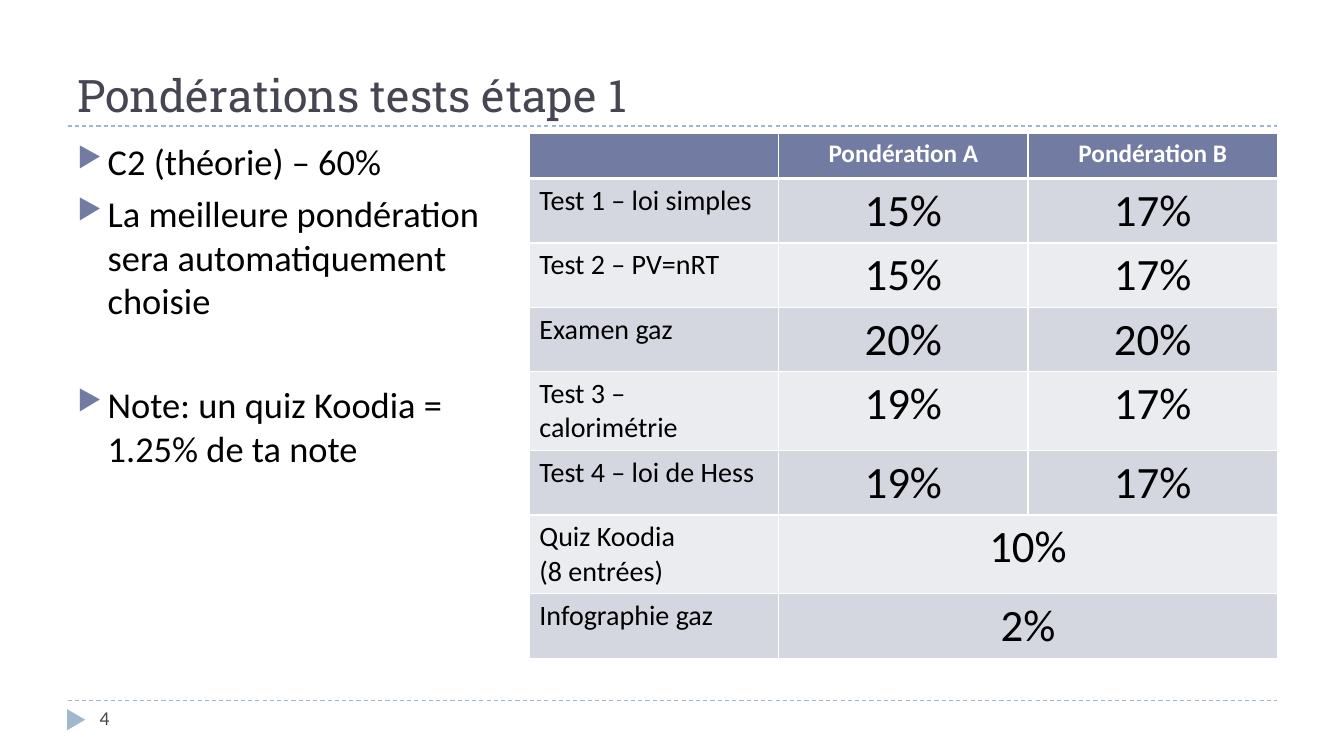
from dataclasses import dataclass

from lxml.etree import SubElement
from pptx import Presentation
from pptx.dml.color import RGBColor
from pptx.enum.dml import MSO_LINE
from pptx.enum.shapes import MSO_CONNECTOR, MSO_SHAPE
from pptx.enum.text import MSO_ANCHOR, PP_ALIGN
from pptx.oxml.ns import qn
from pptx.util import Inches, Pt


@dataclass(frozen=True)
class Theme:
    heading_font: str = "Roboto Slab"
    body_font: str = "Calibri"
    heading: str = "464653"
    text: str = "000000"
    white: str = "FFFFFF"
    accent: str = "727CA3"
    rule: str = "9FB8CD"
    bands: tuple = ("D5D7E0", "EBECF0")
    title_size: int = 32
    bullet_size: int = 26
    header_size: int = 18
    label_size: int = 20
    value_size: int = 32
    number_size: int = 14


THEME = Theme()

BULLETS = [
    # text, space before in points
    ("C2 (théorie) – 60%", 6),
    ("La meilleure pondération sera automatiquement choisie", 6),
    ("Note: un quiz Koodia = 1.25% de ta note", 43),
]

HEADERS = ["", "Pondération A", "Pondération B"]
WEIGHTS = [
    # label, row height, one value per column or a single shared value
    ("Test 1 – loi simples", 0.64, ["15%", "17%"]),
    ("Test 2 – PV=nRT", 0.64, ["15%", "17%"]),
    ("Examen gaz", 0.64, ["20%", "20%"]),
    ("Test 3 – calorimétrie", 0.78, ["19%", "17%"]),
    ("Test 4 – loi de Hess", 0.64, ["19%", "17%"]),
    ("Quiz Koodia\n(8 entrées)", 0.78, ["10%"]),
    ("Infographie gaz", 0.64, ["2%"]),
]


def write(paragraph, text, *, size, color=THEME.text, font=THEME.body_font,
          bold=False, align=PP_ALIGN.LEFT, space_before=0):
    paragraph.alignment = align
    paragraph.space_before = Pt(space_before)
    run = paragraph.add_run()
    run.text = text
    run.font.name = font
    run.font.size = Pt(size)
    run.font.bold = bold
    run.font.color.rgb = RGBColor.from_string(color)


def add_text_frame(slide, left, top, width, height, anchor=MSO_ANCHOR.TOP):
    box = slide.shapes.add_textbox(Inches(left), Inches(top), Inches(width), Inches(height))
    box.text_frame.word_wrap = True
    box.text_frame.vertical_anchor = anchor
    return box.text_frame


def add_dashed_rule(slide, top):
    rule = slide.shapes.add_connector(
        MSO_CONNECTOR.STRAIGHT, Inches(0.67), Inches(top), Inches(12.67), Inches(top))
    rule.line.color.rgb = RGBColor.from_string(THEME.rule)
    rule.line.width = Pt(0.75)
    rule.line.dash_style = MSO_LINE.DASH
    SubElement(rule.element.spPr, qn("a:effectLst"))


def add_page_marker(slide):
    marker = slide.shapes.add_shape(
        MSO_SHAPE.ISOSCELES_TRIANGLE, Inches(0.65), Inches(7.05), Inches(0.21), Inches(0.18))
    marker.rotation = 90
    marker.shadow.inherit = False
    marker.fill.solid()
    marker.fill.fore_color.rgb = RGBColor.from_string(THEME.rule)
    marker.line.fill.background()


def set_bullet(paragraph):
    properties = paragraph._p.get_or_add_pPr()
    properties.set("marL", str(Inches(0.3)))
    properties.set("indent", str(Inches(-0.3)))
    color = SubElement(properties, qn("a:buClr"))
    SubElement(color, qn("a:srgbClr"), val=THEME.accent)
    SubElement(properties, qn("a:buSzPct"), val="76000")
    SubElement(properties, qn("a:buChar"), char="▶")


def add_bullets(slide):
    frame = add_text_frame(slide, 0.67, 1.33, 4.5, 5.25)
    for index, (text, space_before) in enumerate(BULLETS):
        paragraph = frame.add_paragraph() if index else frame.paragraphs[0]
        write(paragraph, text, size=THEME.bullet_size, space_before=space_before)
        set_bullet(paragraph)


def style_cell(cell, fill, top=1, bottom=1):
    """Give the cell white borders, with widths in points, and a solid fill."""
    properties = cell._tc.get_or_add_tcPr()
    for side, width in (("L", 1), ("R", 1), ("T", top), ("B", bottom)):
        border = SubElement(properties, qn(f"a:ln{side}"), w=str(Pt(width)))
        solid = SubElement(border, qn("a:solidFill"))
        SubElement(solid, qn("a:srgbClr"), val=THEME.white)
    cell.fill.solid()
    cell.fill.fore_color.rgb = RGBColor.from_string(fill)


def write_cell(cell, text, **text_format):
    for index, line in enumerate(text.split("\n")):
        frame = cell.text_frame
        paragraph = frame.add_paragraph() if index else frame.paragraphs[0]
        write(paragraph, line, **text_format)


def add_weight_table(slide):
    heights = [0.45] + [height for _, height, _ in WEIGHTS]
    table = slide.shapes.add_table(
        len(heights), len(HEADERS), Inches(5.25), Inches(1.32),
        Inches(7.42), Inches(sum(heights))).table
    for row, height in zip(table.rows, heights):
        row.height = Inches(height)

    for column, header in enumerate(HEADERS):
        cell = table.cell(0, column)
        style_cell(cell, THEME.accent, bottom=3)
        if header:
            write_cell(cell, header, size=THEME.header_size, color=THEME.white,
                       bold=True, align=PP_ALIGN.CENTER)

    for row, (label, _, values) in enumerate(WEIGHTS, start=1):
        for column in range(len(HEADERS)):
            style_cell(table.cell(row, column), THEME.bands[(row - 1) % 2],
                       top=3 if row == 1 else 1)
        write_cell(table.cell(row, 0), label, size=THEME.label_size)
        if len(values) == 1:
            table.cell(row, 1).merge(table.cell(row, 2))
        for column, value in enumerate(values, start=1):
            write_cell(table.cell(row, column), value,
                       size=THEME.value_size, align=PP_ALIGN.CENTER)


def main():
    presentation = Presentation()
    presentation.slide_width = Inches(13.33)
    presentation.slide_height = Inches(7.5)
    slide = presentation.slides.add_slide(presentation.slide_layouts[6])

    for top in (6.95, 1.25):
        add_dashed_rule(slide, top)
    add_page_marker(slide)

    title = add_text_frame(slide, 0.67, 0.17, 12, 1.08, anchor=MSO_ANCHOR.BOTTOM)
    write(title.paragraphs[0], "Pondérations tests étape 1", size=THEME.title_size,
          color=THEME.heading, font=THEME.heading_font)
    page_number = add_text_frame(slide, 0.89, 6.95, 2.89, 0.4)
    write(page_number.paragraphs[0], "4", size=THEME.number_size, color=THEME.heading)

    add_bullets(slide)
    add_weight_table(slide)
    presentation.save("out.pptx")


if __name__ == "__main__":
    main()
